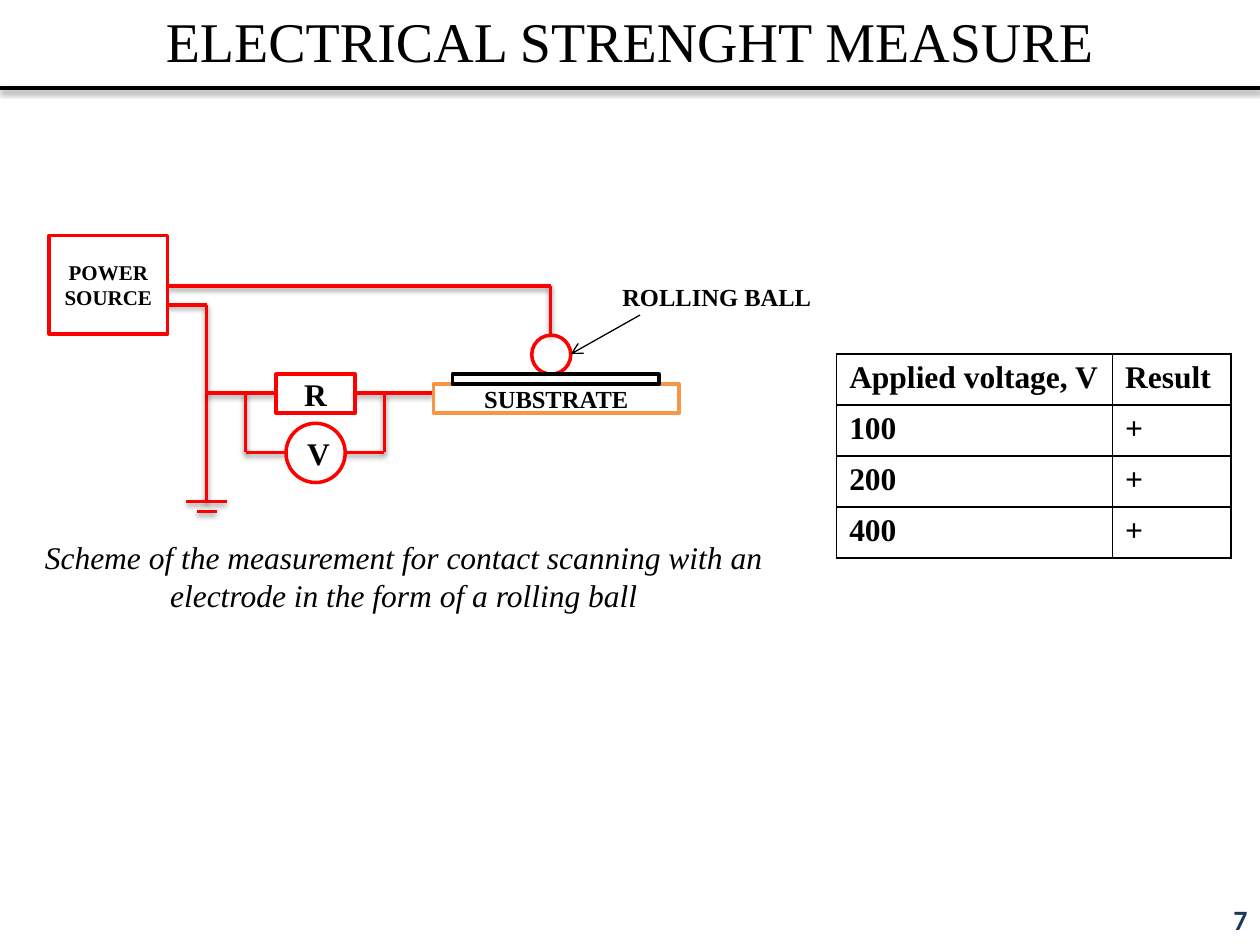
from dataclasses import dataclass

from lxml import etree
from pptx import Presentation
from pptx.dml.color import RGBColor
from pptx.enum.shapes import MSO_CONNECTOR, MSO_SHAPE
from pptx.enum.text import MSO_ANCHOR, MSO_AUTO_SIZE, PP_ALIGN
from pptx.oxml import parse_xml
from pptx.oxml.ns import nsdecls, qn
from pptx.util import Inches, Pt

RECT, OVAL = MSO_SHAPE.RECTANGLE, MSO_SHAPE.OVAL
STRAIGHT = MSO_CONNECTOR.STRAIGHT
TOP, MIDDLE = MSO_ANCHOR.TOP, MSO_ANCHOR.MIDDLE
LEFT, CENTER, RIGHT = PP_ALIGN.LEFT, PP_ALIGN.CENTER, PP_ALIGN.RIGHT
NO_FIT = MSO_AUTO_SIZE.NONE


@dataclass(frozen=True)
class Theme:
    """Colours, fonts and sizes of the slide."""
    black: str = "000000"
    white: str = "FFFFFF"
    red: str = "FF0000"
    orange: str = "F79646"
    navy: str = "17375E"
    serif: str = "Times New Roman"
    sans: str = "Calibri"
    title: int = 32
    body: int = 18
    page: int = 16
    label: int = 14
    small: int = 12
    thick: float = 2
    thin: float = 0.75


T = Theme()

WIRES = [
    (4.37, 2.27, 1.33, 2.27), (4.37, 2.66, 4.37, 2.27),
    (1.64, 2.42, 1.33, 2.42), (1.64, 3.98, 1.64, 2.42),
    (2.19, 3.12, 1.64, 3.12), (3.44, 3.12, 2.81, 3.12),
    (1.95, 3.59, 1.95, 3.12), (3.05, 3.59, 3.05, 3.12),
    (2.27, 3.59, 1.95, 3.59), (3.05, 3.59, 2.73, 3.59),
    (1.8, 3.98, 1.48, 3.98), (1.72, 4.06, 1.56, 4.06),
]
PARTS = [
    (OVAL, (4.22, 2.66, 0.31, 0.31), T.red, None, "", T.body),
    (RECT, (3.44, 3.05, 1.95, 0.23), T.orange, T.white, "SUBSTRATE", T.label),
    (RECT, (0.39, 1.87, 0.94, 0.78), T.red, None, "POWER SOURCE", T.small),
    (RECT, (2.19, 2.97, 0.63, 0.31), T.red, None, "R", T.body),
    (OVAL, (2.27, 3.36, 0.47, 0.47), T.red, None, "V", T.body),
    (RECT, (3.59, 2.97, 1.64, 0.08), T.black, None, "", T.body),
]
ROWS = [("Applied voltage, V", "Result"), ("100", "+"), ("200", "+"), ("400", "+")]


def rgb(code):
    """Turn a hex code into a colour."""
    return RGBColor.from_string(code)


def write(frame, text, size, align=CENTER, color=T.black, face=T.serif,
          bold=False, italic=False):
    """Put one styled paragraph into a text frame."""
    frame.text = text
    para = frame.paragraphs[0]
    para.alignment = align
    font = para.font
    font.name, font.size = face, Pt(size)
    font.bold, font.italic = bold, italic
    font.color.rgb = rgb(color)


def add_title(slide, text):
    """Place and fill the title."""
    title = slide.shapes.title
    title.left, title.top = Inches(0), Inches(0)
    title.width, title.height = Inches(10), Inches(0.64)
    frame = title.text_frame
    frame.auto_size, frame.vertical_anchor = NO_FIT, TOP
    write(frame, text, T.title)


def add_text(slide, box, text, size, anchor=TOP, **style):
    """Add a wrapping text box."""
    frame = slide.shapes.add_textbox(*map(Inches, box)).text_frame
    frame.word_wrap, frame.vertical_anchor = True, anchor
    write(frame, text, size, **style)


def add_line(slide, ends, color, width=T.thick, shade=True):
    """Add a straight line, with a soft shadow if wanted."""
    line = slide.shapes.add_connector(STRAIGHT, *map(Inches, ends))
    line.line.color.rgb, line.line.width = rgb(color), Pt(width)
    props = line._element.spPr
    effect = etree.SubElement(props, qn("a:effectLst"))
    if shade:
        effect.append(parse_xml(
            f'<a:outerShdw {nsdecls("a")} blurRad="{Pt(3.1)}" dist="{Pt(1.6)}" '
            f'dir="5400000" rotWithShape="0"><a:srgbClr val="{T.black}">'
            '<a:alpha val="38000"/></a:srgbClr></a:outerShdw>'))
    return line


def add_arrow(slide, ends):
    """Add a thin pointer with an open head."""
    line = add_line(slide, ends, T.black, T.thin, shade=False)
    etree.SubElement(line.line._get_or_add_ln(), qn("a:tailEnd"), type="arrow")


def add_part(slide, kind, box, color, fill, text, size):
    """Add an outlined circuit part with its label."""
    part = slide.shapes.add_shape(kind, *map(Inches, box))
    part.shadow.inherit = False
    if fill:
        part.fill.solid()
        part.fill.fore_color.rgb = rgb(fill)
    else:
        part.fill.background()
    part.line.color.rgb, part.line.width = rgb(color), Pt(T.thick)
    if text:
        part.text_frame.vertical_anchor = MIDDLE
        write(part.text_frame, text, size, bold=True)


def add_border(cell):
    """Draw the four edges of a cell."""
    props = cell._tc.get_or_add_tcPr()
    for side in ("lnL", "lnR", "lnT", "lnB"):
        props.append(parse_xml(
            f'<a:{side} {nsdecls("a")} w="{Pt(1)}"><a:solidFill>'
            f'<a:srgbClr val="{T.black}"/></a:solidFill></a:{side}>'))


def add_grid(slide, box, rows, widths):
    """Add the table of results."""
    grid = slide.shapes.add_table(len(rows), len(widths), *map(Inches, box)).table
    grid.first_row = grid.horz_banding = False
    for col, width in zip(grid.columns, widths):
        col.width = Inches(width)
    for row, texts in zip(grid.rows, rows):
        for cell, text in zip(row.cells, texts):
            add_border(cell)
            cell.fill.background()
            write(cell.text_frame, text, T.body, align=LEFT, bold=True)


def main():
    """Build and save the slide."""
    deck = Presentation()
    deck.slide_width, deck.slide_height = Inches(10), Inches(7.5)
    slide = deck.slides.add_slide(deck.slide_layouts[5])
    add_title(slide, "ELECTRICAL STRENGHT MEASURE")
    add_line(slide, (0, 0.7, 10, 0.7), T.black)
    for ends in WIRES:
        add_line(slide, ends, T.red)
    for part in PARTS:
        add_part(slide, *part)
    add_arrow(slide, (5.08, 2.5, 4.53, 2.81))
    add_text(slide, (4.84, 2.19, 1.72, 0.34), "ROLLING BALL", T.label,
             align=LEFT, bold=True)
    add_text(slide, (0.16, 4.22, 6.09, 0.71),
             "Scheme of the measurement for contact scanning with an "
             "electrode in the form of a rolling ball", T.body, italic=True)
    add_grid(slide, (6.64, 2.81, 3.13, 1.62), ROWS, (2.19, 0.94))
    add_text(slide, (7.67, 7.1, 2.33, 0.4), "7", T.page, anchor=MIDDLE,
             align=RIGHT, color=T.navy, face=T.sans, bold=True)
    deck.save("out.pptx")


if __name__ == "__main__":
    main()
